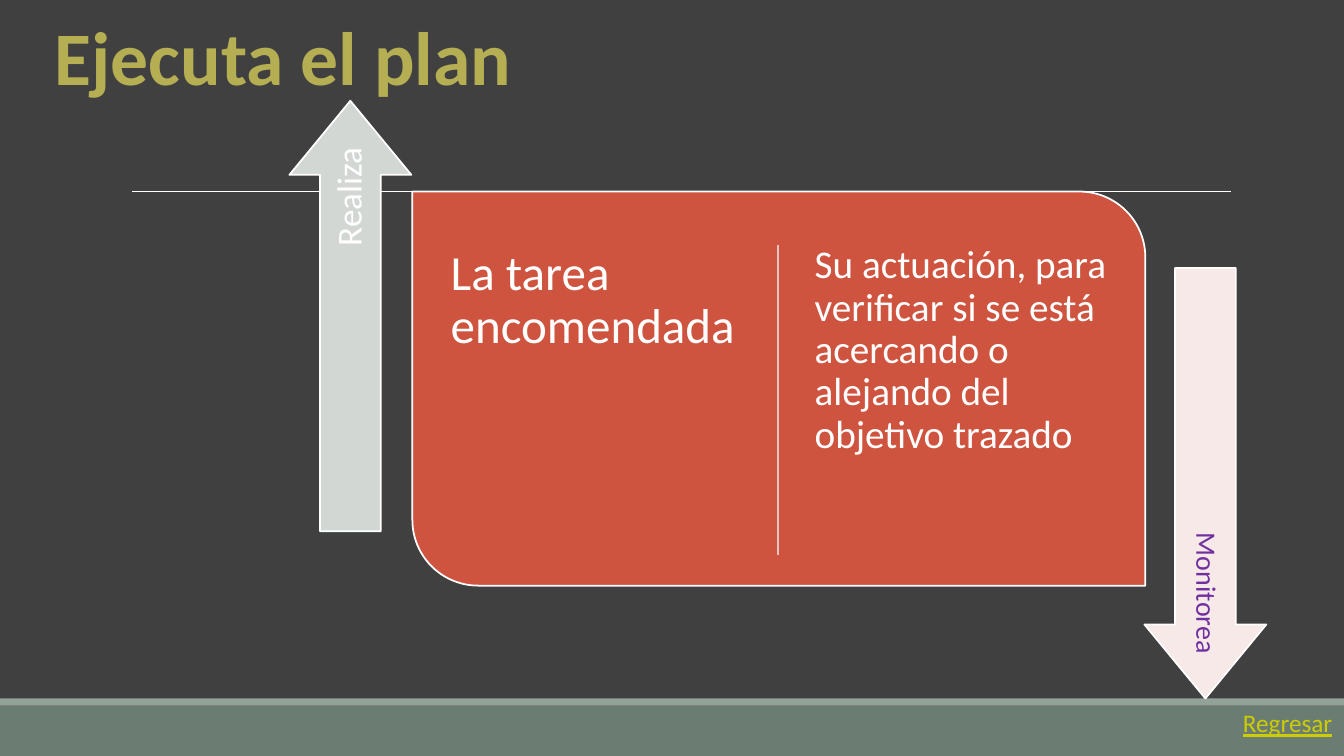
import pptx
import pptx.util
import pptx.dml.color
import pptx.enum.shapes
import pptx.enum.text
import pptx.oxml.ns
import lxml.etree

Inches = pptx.util.Inches
RGBColor = pptx.dml.color.RGBColor
MSO_SHAPE = pptx.enum.shapes.MSO_SHAPE
PP_ALIGN = pptx.enum.text.PP_ALIGN
MSO_ANCHOR = pptx.enum.text.MSO_ANCHOR

DARK = RGBColor(0x40, 0x40, 0x40)
WHITE = RGBColor(0xFF, 0xFF, 0xFF)
OLIVE = RGBColor(0xB5, 0xAE, 0x53)
GREEN = RGBColor(0x6B, 0x7D, 0x72)
SAGE = RGBColor(0x93, 0xA2, 0x99)
RED = RGBColor(0xCF, 0x54, 0x3F)
PINK = RGBColor(0xE9, 0xC3, 0xC0)
GREY = RGBColor(0xD2, 0xD7, 0xD4)
BLUSH = RGBColor(0xF6, 0xE9, 0xE8)
PURPLE = RGBColor(0x70, 0x30, 0xA0)
YELLOW = RGBColor(0xCC, 0xCC, 0x00)


def write(sp, text, size, color, bold=False, underline=False, align=PP_ALIGN.LEFT,
          anchor=MSO_ANCHOR.TOP, spacing=1.0, inset=None, wrap=True):
    """Fill a shape's text frame with one formatted paragraph."""
    tf = sp.text_frame
    tf.word_wrap = wrap
    tf.auto_size = pptx.enum.text.MSO_AUTO_SIZE.NONE
    tf.vertical_anchor = anchor
    if inset is not None:
        tf.margin_left = tf.margin_right = Inches(inset)
        tf.margin_top = tf.margin_bottom = Inches(inset)
    p = tf.paragraphs[0]
    p.alignment = align
    p.line_spacing = spacing
    r = p.add_run()
    r.text = text
    r.font.name = "Calibri"
    r.font.size = pptx.util.Pt(size)
    r.font.bold = bold
    r.font.underline = underline
    r.font.color.rgb = color


def add_text(s, box, text, size, color, rotation=0, **fmt):
    """Add a text box with formatted text."""
    sp = s.shapes.add_textbox(*map(Inches, box))
    sp.rotation = rotation
    write(sp, text, size, color, **fmt)


def add_shape(s, kind, box, fill, outline=None, adjust=(), rotation=0):
    """Add a flat preset shape."""
    sp = s.shapes.add_shape(kind, *map(Inches, box))
    sp.shadow.inherit = False
    sp.rotation = rotation
    for i, value in enumerate(adjust):
        sp.adjustments[i] = value
    sp.fill.solid()
    sp.fill.fore_color.rgb = fill
    if outline is None:
        sp.line.fill.background()
    else:
        sp.line.color.rgb = outline
        sp.line.width = pptx.util.Pt(1.25)


def add_line(s, x1, y1, x2, y2, color, width):
    """Add a straight line without shadow."""
    sp = s.shapes.add_connector(pptx.enum.shapes.MSO_CONNECTOR.STRAIGHT,
                                *map(Inches, (x1, y1, x2, y2)))
    sp.line.color.rgb = color
    sp.line.width = pptx.util.Pt(width)
    lxml.etree.SubElement(sp._element.spPr, pptx.oxml.ns.qn("a:effectLst"))


def add_title(s, box, text):
    """Place and format the title placeholder."""
    sp = s.shapes.title
    sp.left, sp.top, sp.width, sp.height = map(Inches, box)
    write(sp, text, 54, OLIVE, bold=True, align=PP_ALIGN.CENTER, wrap=False)


def add_footer(s, x, y, w, h):
    """Draw the two-tone band and its return label."""
    edge = 0.07
    add_shape(s, MSO_SHAPE.RECTANGLE, (x, y + edge, w, h - edge), GREEN)
    add_shape(s, MSO_SHAPE.RECTANGLE, (x, y, w, edge), SAGE)
    add_text(s, (x + w - 1.1, y + 0.04, 1.1, 0.4), "Regresar", 18, YELLOW,
             underline=True, wrap=False)


def add_panel(s, x, y, w, h, columns):
    """Draw the red panel with two text columns and a divider."""
    add_shape(s, MSO_SHAPE.ROUND_2_DIAG_RECTANGLE, (x, y, w, h), RED, WHITE, (0, 0.167))
    middle = x + w / 2 - 0.01
    add_line(s, middle, y + 0.53, middle, y + h - 0.3, PINK, 1.25)
    for i, (text, size, inset) in enumerate(columns):
        add_text(s, (x + 0.23 + 3.64 * i, y + 0.41, 3.15, 3.32), text, size, WHITE,
                 spacing=0.9, inset=inset)


def add_arrow(s, x, y, w, h, text, size, color, fill, inset, up):
    """Draw a vertical arrow in the given box, with its label near the tip."""
    cx, cy = x + w / 2, y + h / 2
    rotation = 270 if up else 90
    add_shape(s, MSO_SHAPE.RIGHT_ARROW, (cx - h / 2, cy - w / 2, h, w), fill, WHITE,
              (0.498, 0.607), rotation)
    shift = 0.18 if up else -0.18
    add_text(s, (cx - 1.95, cy + shift - 0.3, 3.9, 0.6), text, size, color, rotation,
             align=PP_ALIGN.RIGHT, anchor=MSO_ANCHOR.MIDDLE, spacing=0.9, inset=inset)


def add_plan_slide(prs):
    """Build the plan execution slide."""
    s = prs.slides.add_slide(prs.slide_layouts[5])
    s.background.fill.solid()
    s.background.fill.fore_color.rgb = DARK
    add_line(s, 1.31, 1.9, 12.21, 1.9, WHITE, 0.5)
    add_title(s, (0.42, 0.05, 4.78, 1.01), "Ejecuta el plan")
    add_footer(s, 0, 6.93, 13.33, 0.57)
    add_panel(s, 4.09, 1.9, 7.27, 3.91, [
        ("La tarea encomendada", 35, 0.15),
        ("Su actuación, para verificar si se está acercando o alejando "
         "del objetivo trazado", 28, 0.12),
    ])
    add_arrow(s, 2.87, 1.0, 1.21, 4.27, "Realiza", 25, WHITE, GREY, 0.1, True)
    add_arrow(s, 11.35, 2.66, 1.21, 4.27, "Monitorea", 20, PURPLE, BLUSH, 0.08, False)


def main():
    """Create and save the presentation."""
    prs = pptx.Presentation()
    prs.slide_width = Inches(13.33)
    prs.slide_height = Inches(7.5)
    add_plan_slide(prs)
    prs.save("out.pptx")


if __name__ == "__main__":
    main()
